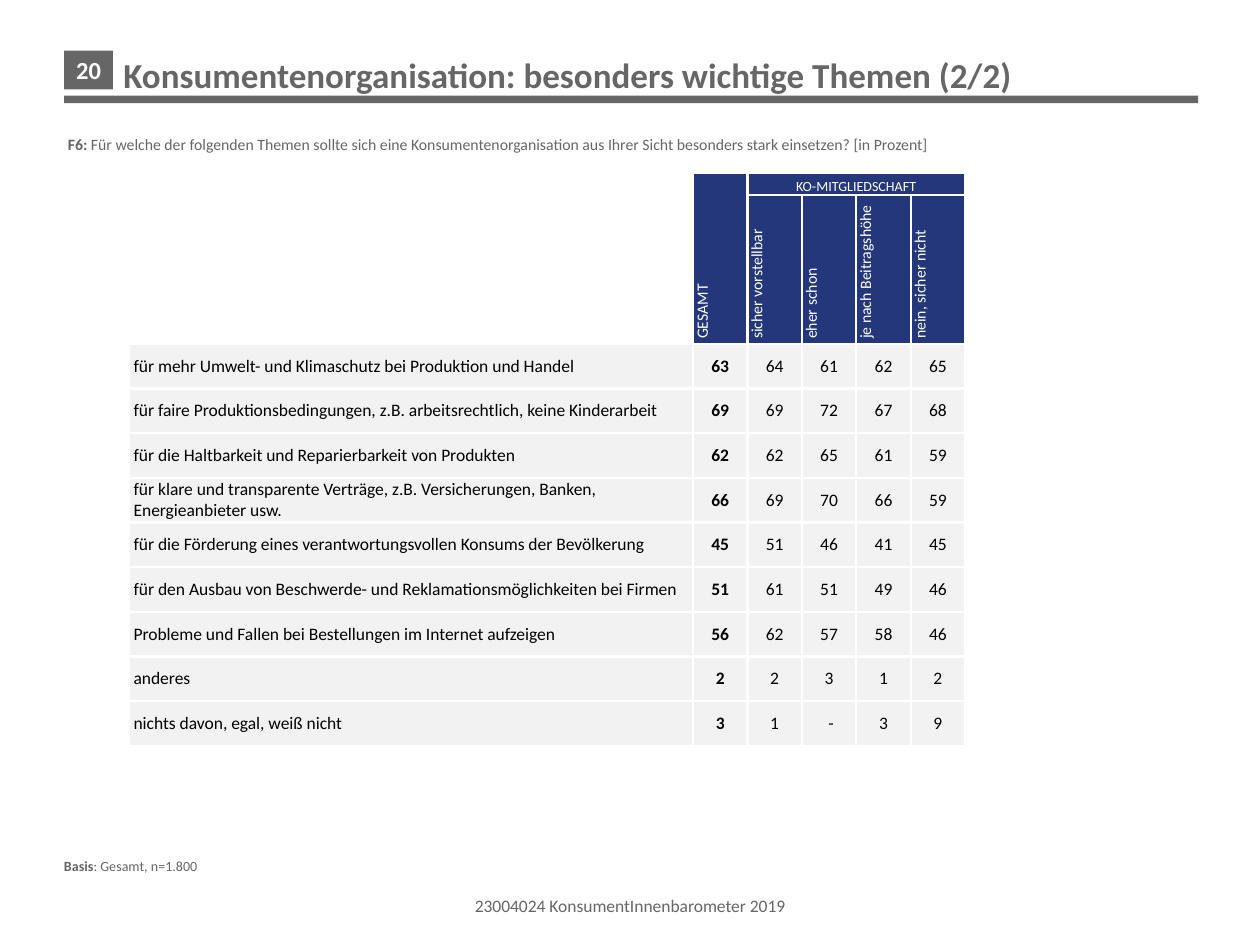
from lxml import etree
from pptx import Presentation
from pptx.dml.color import RGBColor
from pptx.enum.shapes import MSO_SHAPE
from pptx.enum.text import MSO_ANCHOR, MSO_AUTO_SIZE, PP_ALIGN
from pptx.oxml.ns import qn
from pptx.util import Inches, Pt

RECTANGLE, ROUNDED = MSO_SHAPE.RECTANGLE, MSO_SHAPE.ROUNDED_RECTANGLE
LEFT, CENTER = PP_ALIGN.LEFT, PP_ALIGN.CENTER
TOP, MIDDLE, BOTTOM = MSO_ANCHOR.TOP, MSO_ANCHOR.MIDDLE, MSO_ANCHOR.BOTTOM

FONT = "Calibri"
COLORS = {"gray": "666666", "navy": "23377A", "cell": "F2F2F2",
          "white": "FFFFFF", "black": "000000"}
WIDTH, HEIGHT = Inches(10), Inches(7.5)
COLUMN, ROW = WIDTH / 100, HEIGHT / 75  # layout grid of 100 columns by 75 rows

TITLE_ONLY = 5
GROUP = "KO-MITGLIEDSCHAFT"
HEADINGS = ["sicher vorstellbar", "eher schon", "je nach Beitragshöhe", "nein, sicher nicht"]
TOPICS = [
    ("für mehr Umwelt- und Klimaschutz bei Produktion und Handel", 63, 64, 61, 62, 65),
    ("für faire Produktionsbedingungen, z.B. arbeitsrechtlich, keine Kinderarbeit",
     69, 69, 72, 67, 68),
    ("für die Haltbarkeit und Reparierbarkeit von Produkten", 62, 62, 65, 61, 59),
    ("für klare und transparente Verträge, z.B. Versicherungen, Banken, Energieanbieter usw.",
     66, 69, 70, 66, 59),
    ("für die Förderung eines verantwortungsvollen Konsums der Bevölkerung",
     45, 51, 46, 41, 45),
    ("für den Ausbau von Beschwerde- und Reklamationsmöglichkeiten bei Firmen",
     51, 61, 51, 49, 46),
    ("Probleme und Fallen bei Bestellungen im Internet aufzeigen", 56, 62, 57, 58, 46),
    ("anderes", 2, 2, 3, 1, 2),
    ("nichts davon, egal, weiß nicht", 3, 1, " -", 3, 9),
]


def color(name):
    return RGBColor.from_string(COLORS[name])


def place(left, top, width, height):
    """Turn grid columns and rows into a box in EMU."""
    return (round(left * COLUMN), round(top * ROW),
            round(width * COLUMN), round(height * ROW))


def inside(box, left, top, width, height):
    """Box given as shares of another box."""
    return (round(box[0] + left * box[2]), round(box[1] + top * box[3]),
            round(width * box[2]), round(height * box[3]))


def style(paragraph, size, color_name, bold=None, alignment=LEFT):
    paragraph.alignment = alignment
    font = paragraph.font
    font.name, font.size, font.bold = FONT, Pt(size), bold
    font.color.rgb = color(color_name)


def add_block(slide, kind, box, fill=None):
    shape = slide.shapes.add_shape(kind, *box)
    shape.shadow.inherit = False
    shape.line.fill.background()
    if fill:
        shape.fill.solid()
        shape.fill.fore_color.rgb = color(fill)
    else:
        shape.fill.background()
    shape.text_frame.vertical_anchor = MIDDLE
    return shape


def add_header(slide, box, number, title):
    tile = add_block(slide, RECTANGLE, inside(box, 0, 0.09, 0.043, 0.67), "gray")
    tile.text_frame.word_wrap = False
    tile.text_frame.text = number
    style(tile.text_frame.paragraphs[0], 14, "white", True, CENTER)
    add_block(slide, RECTANGLE, inside(box, 0, 0.87, 1, 0.13), "gray")

    heading = slide.shapes.title
    heading.left, heading.top, heading.width, heading.height = inside(box, 0.041, 0, 0.963, 1)
    frame = heading.text_frame
    frame.text = title
    frame.auto_size = MSO_AUTO_SIZE.NONE
    frame.vertical_anchor = MIDDLE
    style(frame.paragraphs[0], 20, "gray", True)


def add_note(slide, box, label, text, size, spacing=1.0):
    """Text line that opens with a bold label."""
    frame = slide.shapes.add_textbox(*box).text_frame
    frame.word_wrap = True
    paragraph = frame.paragraphs[0]
    paragraph.line_spacing = spacing
    style(paragraph, size, "gray")
    label_run = paragraph.add_run()
    label_run.text = label
    label_run.font.bold = True
    paragraph.add_run().text = text


def add_footer(slide, box, text):
    shape = add_block(slide, ROUNDED, box)
    shape.text_frame.text = text
    style(shape.text_frame.paragraphs[0], 10, "gray", alignment=CENTER)


def add_borders(cell):
    properties = cell._tc.get_or_add_tcPr()
    for side in ("a:lnL", "a:lnR", "a:lnT", "a:lnB"):
        line = etree.SubElement(properties, qn(side), w=str(Pt(1.5)))
        fill = etree.SubElement(line, qn("a:solidFill"))
        etree.SubElement(fill, qn("a:srgbClr"), val=COLORS["white"])


def empty_cell(cell):
    cell.margin_left = cell.margin_right = cell.margin_top = cell.margin_bottom = 0
    add_borders(cell)
    cell.fill.background()
    cell.text_frame.paragraphs[0]._p.get_or_add_endParaRPr().set("sz", "800")


def fill_cell(cell, text, size, fill, text_color, bold=False, alignment=LEFT,
              anchor=MIDDLE, vertical=False):
    cell.fill.solid()
    cell.fill.fore_color.rgb = color(fill)
    cell.vertical_anchor = anchor
    cell.text = str(text)
    paragraph = cell.text_frame.paragraphs[0]
    if alignment == LEFT:
        paragraph._p.get_or_add_pPr().set("marL", str(Inches(0.04)))
    style(paragraph, size, text_color, bold, alignment)
    if vertical:
        cell._tc.get_or_add_tcPr().set("vert", "vert270")


def add_topic_table(slide, box):
    value_count, header_rows = len(HEADINGS) + 1, 2
    table = slide.shapes.add_table(
        len(TOPICS) + header_rows, value_count + 1, *box).table
    table.first_row = table.horz_banding = False

    label_width = round(44.8 * COLUMN)
    header_heights = [round(1.8 * ROW), round(11.8 * ROW)]
    value_width = (box[2] - label_width) // value_count
    topic_height = (box[3] - sum(header_heights)) // len(TOPICS)
    for column, width in zip(table.columns, [label_width] + [value_width] * value_count):
        column.width = width
    for row, height in zip(table.rows, header_heights + [topic_height] * len(TOPICS)):
        row.height = height

    for cell in table.iter_cells():
        empty_cell(cell)
    table.cell(0, 1).merge(table.cell(1, 1))
    table.cell(0, 2).merge(table.cell(0, value_count))
    fill_cell(table.cell(0, 1), "GESAMT", 9, "navy", "white", vertical=True)
    fill_cell(table.cell(0, 2), GROUP, 8, "navy", "white", alignment=CENTER, anchor=BOTTOM)
    for column, heading in enumerate(HEADINGS, 2):
        fill_cell(table.cell(1, column), heading, 9, "navy", "white", vertical=True)
    for row, topic in enumerate(TOPICS, header_rows):
        for column, value in enumerate(topic):
            fill_cell(table.cell(row, column), value, 10, "cell", "black",
                      bold=column == 1, alignment=CENTER if column else LEFT)


def main():
    presentation = Presentation()
    presentation.slide_width, presentation.slide_height = WIDTH, HEIGHT
    slide = presentation.slides.add_slide(presentation.slide_layouts[TITLE_ONLY])
    add_header(slide, place(5.1, 3.6, 90, 4.6), "20",
               "Konsumentenorganisation: besonders wichtige Themen (2/2)")
    add_note(slide, place(4.4, 9.9, 90.2, 2.2), "F6: ",
             "Für welche der folgenden Themen sollte sich eine Konsumentenorganisation "
             "aus Ihrer Sicht besonders stark einsetzen? [in Prozent]", 9, 1.2)
    add_topic_table(slide, place(10.2, 13.7, 66.4, 45.5))
    add_note(slide, place(4.1, 67.6, 86.7, 2.3), "Basis", ": Gesamt, n=1.800", 8)
    add_footer(slide, place(5.2, 70.1, 89.6, 3.6), "23004024 KonsumentInnenbarometer 2019")
    presentation.save("out.pptx")


if __name__ == "__main__":
    main()
